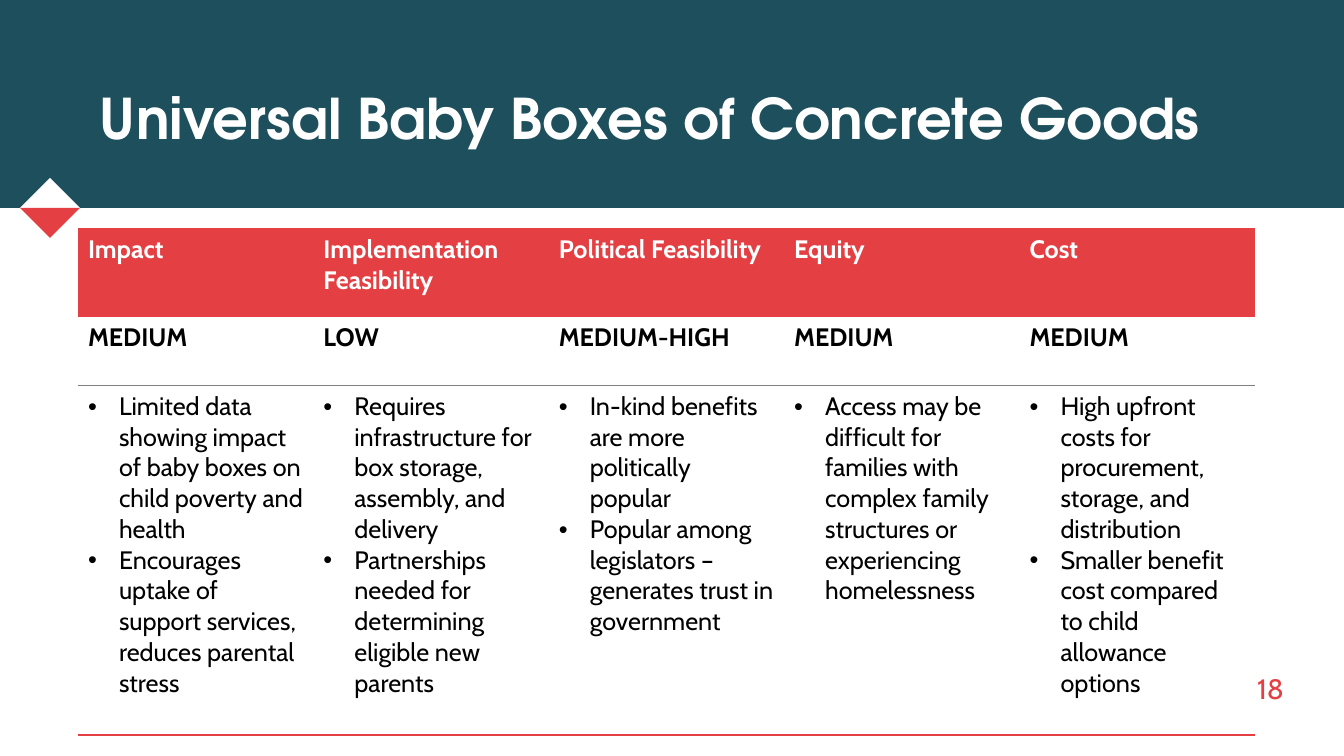
from pptx import Presentation
from pptx import util as u
from pptx.dml.color import RGBColor
from pptx.enum import shapes, text
from pptx.oxml import parse_xml
from pptx.oxml.ns import nsdecls, qn

PX = 914400 / 100.8
HUES = {"teal": "1E4F5C", "red": "E44044", "white": "FFFFFF", "black": "000000", "gray": "7F7F7F"}
PLAIN = "{2D5ABB26-0587-4C30-8999-92F81FD0307C}"

COLUMNS = [
    ("Impact", "MEDIUM", [
        "Limited data showing impact of baby boxes on child poverty and health",
        "Encourages uptake of support services, reduces parental stress"]),
    ("Implementation Feasibility", "LOW", [
        "Requires infrastructure for box storage, assembly, and delivery",
        "Partnerships needed for determining eligible new parents"]),
    ("Political Feasibility", "MEDIUM-HIGH", [
        "In-kind benefits are more politically popular",
        "Popular among legislators – generates trust in government"]),
    ("Equity", "MEDIUM", [
        "Access may be difficult for families with complex family structures "
        "or experiencing homelessness"]),
    ("Cost", "MEDIUM", [
        "High upfront costs for procurement, storage, and distribution",
        "Smaller benefit cost compared to child allowance options"]),
]


def px(n):
    return u.Emu(round(n * PX))


def hue(name):
    return RGBColor.from_string(HUES[name])


def write(frame, lines, size=18, font="Cabin", color="black", bold=False,
          align=text.PP_ALIGN.LEFT, bullet=False):
    frame.word_wrap = True
    for i, line in enumerate(lines):
        para = frame.paragraphs[0] if i == 0 else frame.add_paragraph()
        para.alignment = align
        if bullet:
            props = para._p.get_or_add_pPr()
            props.set("marL", str(px(31)))
            props.set("indent", str(-px(31)))
            props.append(parse_xml(f'<a:buFont {nsdecls("a")} typeface="Arial"/>'))
            props.append(parse_xml(f'<a:buChar {nsdecls("a")} char="•"/>'))
        run = para.add_run()
        run.text = line
        run.font.size, run.font.name, run.font.bold = u.Pt(size), font, bold
        run.font.color.rgb = hue(color)


def edge(cell, side, color, width=1):
    """Draw a border on one side ("T" or "B") of a cell."""
    cell._tc.get_or_add_tcPr().insert(0, parse_xml(
        f'<a:ln{side} {nsdecls("a")} w="{u.Pt(width)}"><a:solidFill>'
        f'<a:srgbClr val="{HUES[color]}"/></a:solidFill></a:ln{side}>'))


class Deck:
    def __init__(self):
        self.file = Presentation()
        self.file.slide_width, self.file.slide_height = px(1344), px(756)
        self.slide = self.file.slides.add_slide(self.file.slide_layouts[6])
        self.items = self.slide.shapes

    def paint(self, shape, color):
        shape.shadow.inherit = False
        shape.fill.solid()
        shape.fill.fore_color.rgb = hue(color)
        shape.line.fill.background()

    def rect(self, x, y, w, h, color):
        kind = shapes.MSO_SHAPE.RECTANGLE
        self.paint(self.items.add_shape(kind, px(x), px(y), px(w), px(h)), color)

    def outline(self, points, color):
        path = self.items.build_freeform(*points[0], scale=PX)
        path.add_line_segments(points[1:], close=True)
        self.paint(path.convert_to_shape(), color)

    def label(self, x, y, w, h, line, foot=5, **style):
        frame = self.items.add_textbox(px(x), px(y), px(w), px(h)).text_frame
        frame.vertical_anchor = text.MSO_ANCHOR.BOTTOM
        frame.margin_bottom = px(foot)
        write(frame, [line], **style)

    def table(self, x, y, w, heights, columns):
        """Fill each column with a heading, a rating and its bulleted reasons."""
        shape = self.items.add_table(len(heights), len(columns), px(x), px(y),
                                     px(w), px(sum(heights)))
        grid = shape.table
        grid.horz_banding = False
        grid._tbl.tblPr.find(qn("a:tableStyleId")).text = PLAIN
        for row, high in zip(grid.rows, heights):
            row.height = px(high)
        for col, (head, rating, reasons) in enumerate(columns):
            top, mid, low = (grid.cell(row, col) for row in range(3))
            for cell, color in ((top, "red"), (mid, "white")):
                cell.fill.solid()
                cell.fill.fore_color.rgb = hue(color)
            low.fill.background()
            write(top.text_frame, [head], color="white", bold=True)
            write(mid.text_frame, [rating], bold=True)
            write(low.text_frame, reasons, bullet=True)
            edge(top, "T", "red")
            edge(mid, "B", "gray", 0.75)
            edge(low, "B", "red")
            edge(low, "T", "gray", 0.75)


def main():
    deck = Deck()
    deck.rect(0, 0, 1344, 208, "teal")
    for tip, color in ((178, "white"), (238, "red")):
        deck.outline([(20, 208), (50, tip), (80, 208)], color)
    deck.label(90, 49, 1165, 107, "Universal Baby Boxes of Concrete Goods",
               size=40, font="TeX Gyre Adventor", color="white", bold=True)
    deck.label(1177, 652, 117, 54, "18", foot=1, size=20, color="red",
               align=text.PP_ALIGN.RIGHT)
    deck.table(78, 229, 1177, [88, 69, 349], COLUMNS)
    deck.file.save("out.pptx")


if __name__ == "__main__":
    main()
